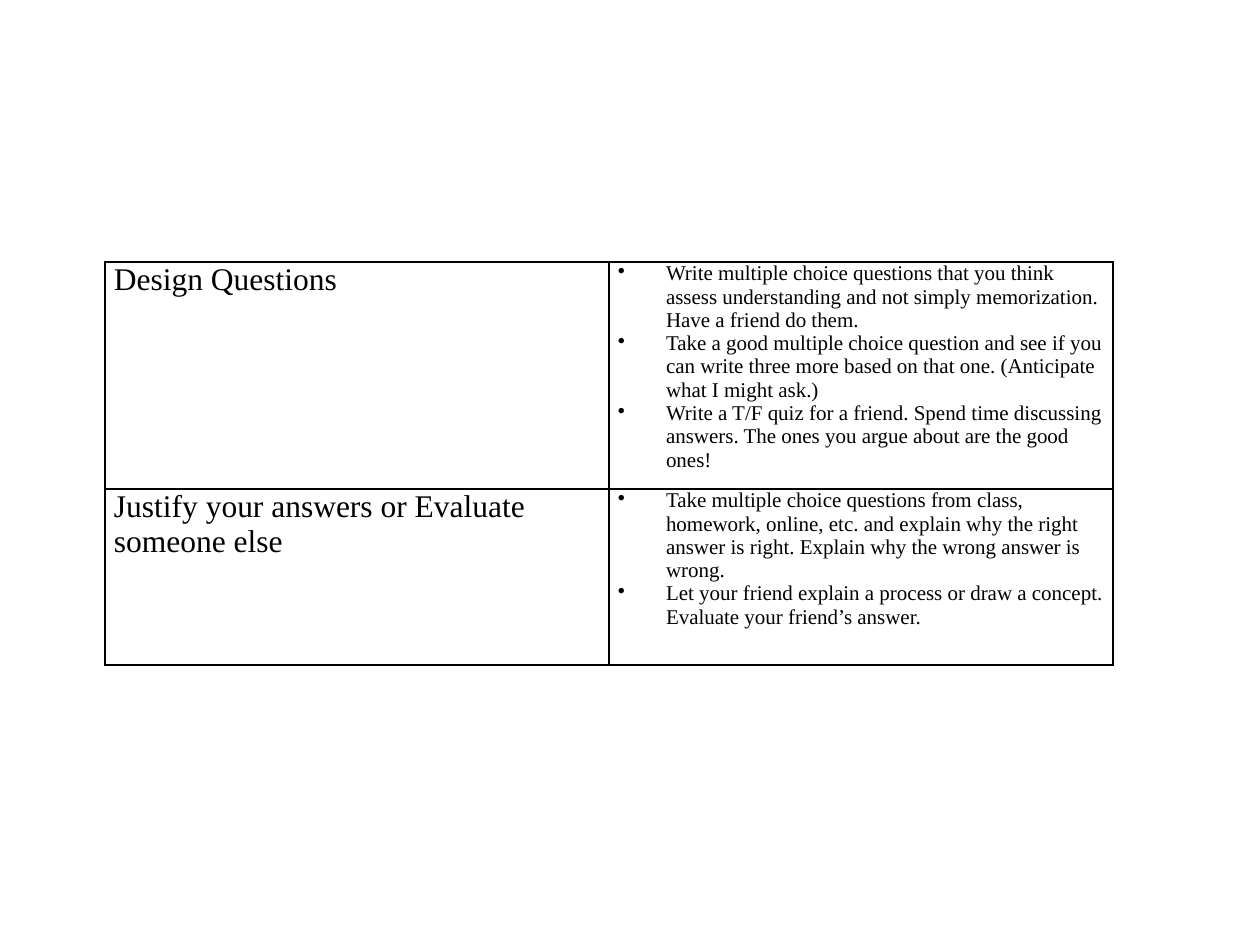
from lxml.etree import SubElement
from pptx import Presentation
from pptx.dml.color import RGBColor as RGB
from pptx.oxml.ns import qn
from pptx.util import Emu, Pt

BLACK = RGB(0, 0, 0)
PX_PER_INCH = 126

STRATEGIES = [
    ("Design Questions", 227, [
        "Write multiple choice questions that you think assess understanding and not simply memorization. "
        "Have a friend do them.",
        "Take a good multiple choice question and see if you can write three more based on that one. "
        "(Anticipate what I might ask.)",
        "Write a T/F quiz for a friend. Spend time discussing answers. "
        "The ones you argue about are the good ones!",
    ]),
    ("Justify your answers or Evaluate someone else", 176, [
        "Take multiple choice questions from class, homework, online, etc. and explain why the right "
        "answer is right. Explain why the wrong answer is wrong.",
        "Let your friend explain a process or draw a concept. Evaluate your friend’s answer.",
    ]),
]


def px(length):
    return Emu(round(length * 914400 / PX_PER_INCH))


class SlideWriter:
    font_name = "Times New Roman"
    ink = BLACK
    inset = 9
    hanging = 48
    border = Pt(1)

    def __init__(self, slide):
        self.slide = slide

    def table(self, left, top, column_widths, row_heights):
        frame = self.slide.shapes.add_table(
            len(row_heights), len(column_widths), px(left), px(top),
            px(sum(column_widths)), px(sum(row_heights)))
        grid = frame.table
        grid.first_row = grid.horz_banding = False
        for column, width in zip(grid.columns, column_widths):
            column.width = px(width)
        for row, height in zip(grid.rows, row_heights):
            row.height = px(height)
        return grid

    def borders(self, cell):
        properties = cell._tc.get_or_add_tcPr()
        for side in ("a:lnL", "a:lnR", "a:lnT", "a:lnB"):
            line = SubElement(properties, qn(side), w=str(self.border))
            paint = SubElement(line, qn("a:solidFill"))
            SubElement(paint, qn("a:srgbClr"), val=str(self.ink))

    def bullet(self, paragraph):
        properties = paragraph._p.get_or_add_pPr()
        properties.set("marL", str(px(self.hanging)))
        properties.set("indent", str(-px(self.hanging)))
        SubElement(properties, qn("a:buChar"), char="•")

    def cell(self, cell, lines, size, bulleted=False):
        self.borders(cell)
        cell.fill.background()
        cell.margin_left = cell.margin_right = px(self.inset)
        cell.margin_top = cell.margin_bottom = 0
        frame = cell.text_frame
        frame.text = "\n".join(lines)
        for paragraph in frame.paragraphs:
            if bulleted:
                self.bullet(paragraph)
            font = paragraph.font
            font.name, font.size = self.font_name, Pt(size)
            font.color.rgb = self.ink


def main():
    deck = Presentation()
    deck.slide_width, deck.slide_height = px(1260), px(945)
    writer = SlideWriter(deck.slides.add_slide(deck.slide_layouts[6]))
    heights = [height for _, height, _ in STRATEGIES]
    study_table = writer.table(105, 262, [504, 504], heights)
    for row, (strategy, _, activities) in enumerate(STRATEGIES):
        writer.cell(study_table.cell(row, 0), [strategy], 18)
        writer.cell(study_table.cell(row, 1), activities, 12, bulleted=True)
    deck.save("out.pptx")


if __name__ == "__main__":
    main()
